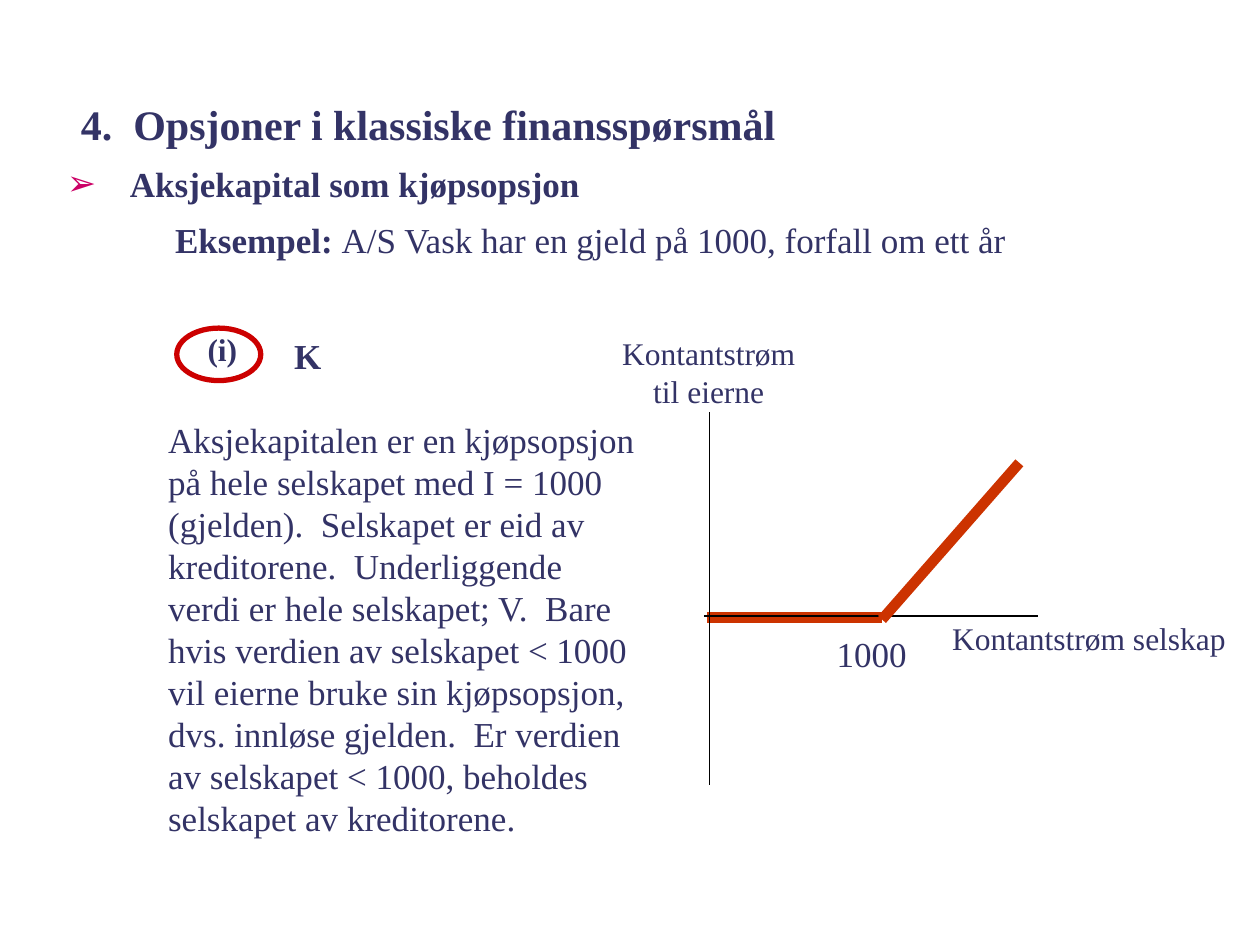
from dataclasses import dataclass

from lxml import etree
from pptx import Presentation
from pptx import util as u
from pptx.dml.color import RGBColor
from pptx.enum import shapes, text
from pptx.oxml.ns import qn


@dataclass(frozen=True)
class Theme:
    font: str = "Times New Roman"
    ink: str = "333366"
    bullet: str = "CC0066"
    ring: str = "CC0000"
    payoff: str = "CC3300"
    axis: str = "000000"
    title_size: int = 24
    body_size: int = 20
    label_size: int = 18


class SlideBuilder:
    def __init__(self, slide, theme):
        self.slide = slide
        self.theme = theme

    def fill_text(self, shape, runs, size, align="LEFT", anchor="TOP"):
        """Write one paragraph of (wording, bold) runs."""
        frame = shape.text_frame
        frame_format = {
            "word_wrap": True,
            "auto_size": text.MSO_AUTO_SIZE.NONE,
            "vertical_anchor": getattr(text.MSO_ANCHOR, anchor),
        }
        for name, value in frame_format.items():
            setattr(frame, name, value)
        paragraph = frame.paragraphs[0]
        paragraph.alignment = getattr(text.PP_ALIGN, align)
        paragraph.space_before = u.Pt(0)
        for wording, bold in runs:
            run = paragraph.add_run()
            run.text = wording
            run_format = {"name": self.theme.font, "size": u.Pt(size), "bold": bold}
            for name, value in run_format.items():
                setattr(run.font, name, value)
            run.font.color.rgb = RGBColor.from_string(self.theme.ink)
        return paragraph

    def placeholder(self, index, box, wording, size, anchor="TOP"):
        holder = self.slide.placeholders[index]
        for name, value in zip(("left", "top", "width", "height"), box):
            setattr(holder, name, u.Pt(value))
        return self.fill_text(holder, [(wording, True)], size, anchor=anchor)

    def bullet(self, paragraph, char, indent):
        props = paragraph._p.get_or_add_pPr()
        props.set("marL", str(u.Pt(indent)))
        props.set("indent", str(u.Pt(-indent)))
        color = etree.SubElement(props, qn("a:buClr"))
        etree.SubElement(color, qn("a:srgbClr"), val=self.theme.bullet)
        etree.SubElement(props, qn("a:buChar"), char=char)

    def textbox(self, box, runs, size, align="LEFT"):
        shape = self.slide.shapes.add_textbox(*map(u.Pt, box))
        self.fill_text(shape, runs, size, align)

    def line(self, start, end, color, width):
        link = self.slide.shapes.add_connector(
            shapes.MSO_CONNECTOR.STRAIGHT, *map(u.Pt, (*start, *end)))
        link.line.color.rgb = RGBColor.from_string(color)
        link.line.width = u.Pt(width)
        etree.SubElement(link._element.spPr, qn("a:effectLst"))

    def ring(self, box, width):
        oval = self.slide.shapes.add_shape(shapes.MSO_SHAPE.OVAL, *map(u.Pt, box))
        oval.shadow.inherit = False
        oval.fill.background()
        oval.line.color.rgb = RGBColor.from_string(self.theme.ring)
        oval.line.width = u.Pt(width)


def main():
    theme = Theme()
    deck = Presentation()
    deck.slide_width, deck.slide_height = u.Pt(720), u.Pt(540)
    page = SlideBuilder(deck.slides.add_slide(deck.slide_layouts[1]), theme)

    # Heading and topic
    page.placeholder(0, (39, 37.5, 642, 66), "4.  Opsjoner i klassiske finansspørsmål",
                     theme.title_size, anchor="MIDDLE")
    topic = page.placeholder(1, (31, 89.5, 420, 31), "Aksjekapital som kjøpsopsjon",
                             theme.body_size)
    page.bullet(topic, "➢", 36)

    # Example and explanation
    page.textbox((93, 121.5, 606, 31),
                 [("Eksempel: ", True),
                  ("A/S Vask har en gjeld på 1000, forfall om ett år", False)],
                 theme.body_size)
    explanation = (
        "Aksjekapitalen er en kjøpsopsjon på hele selskapet med I = 1000 (gjelden).  "
        "Selskapet er eid av kreditorene.  Underliggende verdi er hele selskapet; V.  "
        "Bare hvis verdien av selskapet < 1000 vil eierne bruke sin kjøpsopsjon, dvs. "
        "innløse gjelden.  Er verdien av selskapet < 1000, beholdes selskapet av "
        "kreditorene.")
    page.textbox((89, 235.5, 283, 247), [(explanation, False)], theme.body_size)

    # Payoff diagram: flat up to the debt, then rising
    page.line((404, 353), (504, 353), theme.payoff, 6)
    page.line((405.5, 235.5), (405.5, 448.5), theme.axis, 1)
    page.line((402.5, 352), (593, 352), theme.axis, 1)
    page.line((504, 354), (582.5, 264.5), theme.payoff, 6)

    # Diagram labels
    page.textbox((537, 350, 180, 29), [("Kontantstrøm selskap", False)], theme.label_size)
    page.textbox((345, 187.5, 120, 50), [("Kontantstrøm til eierne", False)],
                 theme.label_size, "CENTER")
    page.textbox((471, 358, 63, 31), [("1000", False)], theme.body_size)

    # Case marker
    page.ring((101, 187.5, 48, 30), 3)
    page.textbox((111.5, 185, 40, 29), [("(i)", True)], theme.label_size)
    page.textbox((161, 187.5, 42, 31), [("K", True)], theme.body_size)

    deck.save("out.pptx")


if __name__ == "__main__":
    main()
